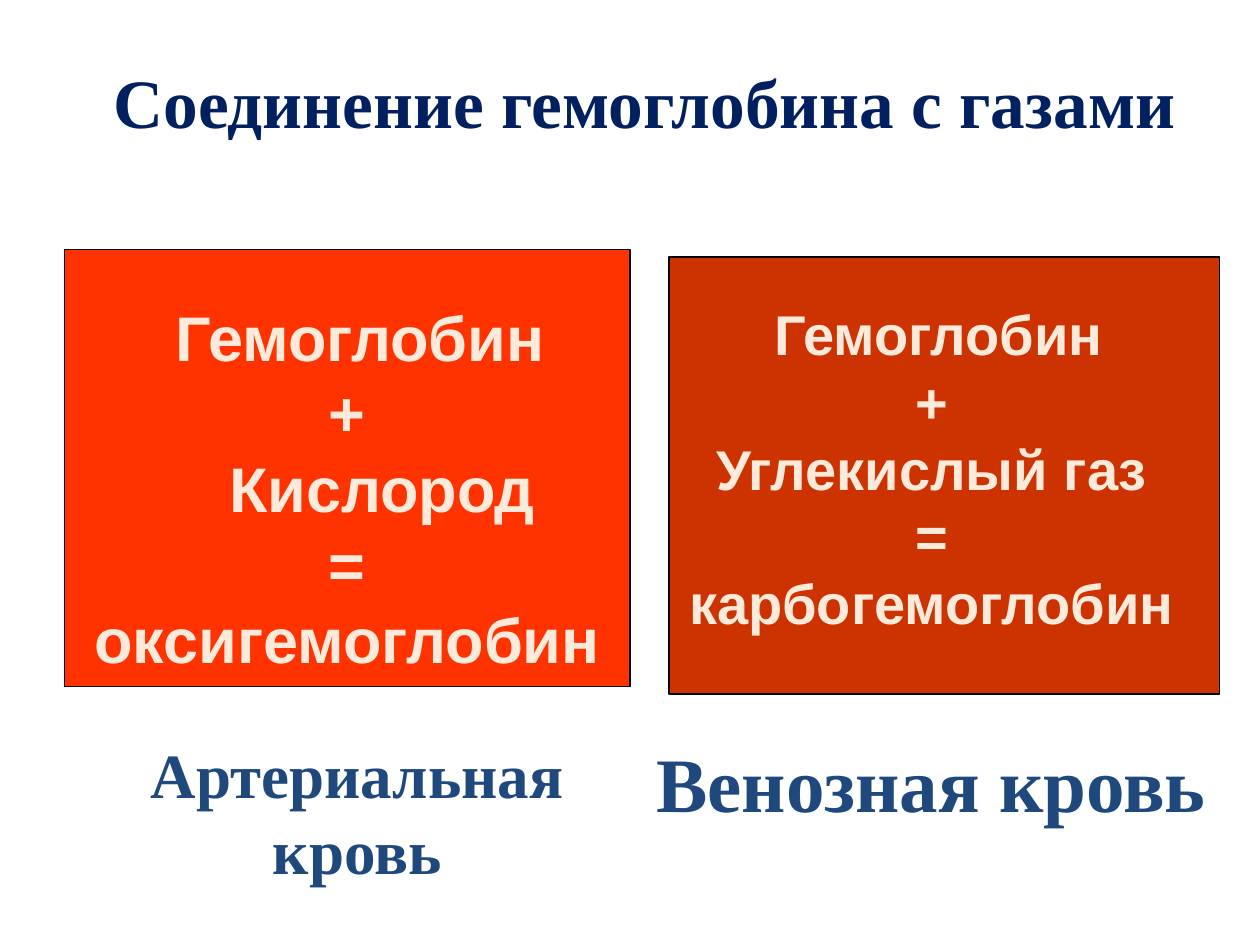
from pptx import Presentation
from pptx.dml.color import RGBColor
from pptx.enum.shapes import MSO_SHAPE as Shape
from pptx.enum.text import MSO_ANCHOR as Anchor, MSO_AUTO_SIZE as AutoSize, PP_ALIGN as Align
from pptx.util import Pt

SERIF, SANS = "Times New Roman", "Arial"
NAVY, BLUE, CREAM = "002060", "1F497D", "FDEADA"


def color(hex_code):
    return RGBColor.from_string(hex_code)


def place(shape, left, top, width, height):
    shape.left, shape.top = Pt(left), Pt(top)
    shape.width, shape.height = Pt(width), Pt(height)


def write_lines(frame, lines, font, size, hex_code, align=Align.CENTER):
    """Fill the frame with (text, left indent in points) lines."""
    frame.word_wrap = True
    frame.auto_size = AutoSize.NONE
    for number, (text, indent) in enumerate(lines):
        paragraph = frame.add_paragraph() if number else frame.paragraphs[0]
        paragraph.alignment = align
        if indent:
            paragraph._p.get_or_add_pPr().set("marL", str(Pt(indent)))
        run = paragraph.add_run()
        run.text = text
        run.font.name, run.font.size, run.font.bold = font, Pt(size), True
        run.font.color.rgb = color(hex_code)


def add_title(slide, text):
    title = slide.shapes.title
    place(title, 39.6, 20.9, 657.4, 81.4)
    frame = title.text_frame
    frame.vertical_anchor = Anchor.MIDDLE
    frame.margin_bottom = Pt(11.6)  # lifts the line slightly above the middle
    write_lines(frame, [(text, 0)], SERIF, 39.6, NAVY)


def add_panel(slide, box, fill):
    panel = slide.shapes.add_shape(Shape.RECTANGLE, *map(Pt, box))
    panel.shadow.inherit = False
    panel.fill.solid()
    panel.fill.fore_color.rgb = color(fill)
    panel.line.color.rgb = color("000000")
    panel.line.width = Pt(0.75)


def add_text(slide, box, lines, font, size, hex_code, align=Align.CENTER):
    textbox = slide.shapes.add_textbox(*map(Pt, box))
    write_lines(textbox.text_frame, lines, font, size, hex_code, align)


def main():
    prs = Presentation()
    prs.slide_width, prs.slide_height = Pt(720), Pt(540)
    slide = prs.slides.add_slide(prs.slide_layouts[5])

    add_title(slide, "Соединение гемоглобина с газами")

    add_panel(slide, (36.7, 142.6, 323.3, 249.8), "FF3300")
    add_panel(slide, (382.3, 146.9, 314.6, 249.8), "CC3300")

    add_text(slide, (48.2, 416.9, 311.8, 94.3),
             [("Артериальная", 0), ("кровь", 0)], SERIF, 36, BLUE)
    add_text(slide, (360, 416.9, 337, 60.5),
             [("Венозная кровь", 8)], SERIF, 44, BLUE, Align.LEFT)

    add_text(slide, (36.7, 167, 323.3, 225.4),
             [("Гемоглобин", 15), ("+", 0), ("Кислород", 40), ("= оксигемоглобин", 0)],
             SANS, 36, CREAM)
    add_text(slide, (382.3, 167.8, 300.2, 234.7),
             [("Гемоглобин", 8), ("+", 0), ("Углекислый газ", 0), ("=", 0),
              ("карбогемоглобин", 0)],
             SANS, 32, CREAM)

    prs.save("out.pptx")


if __name__ == "__main__":
    main()
